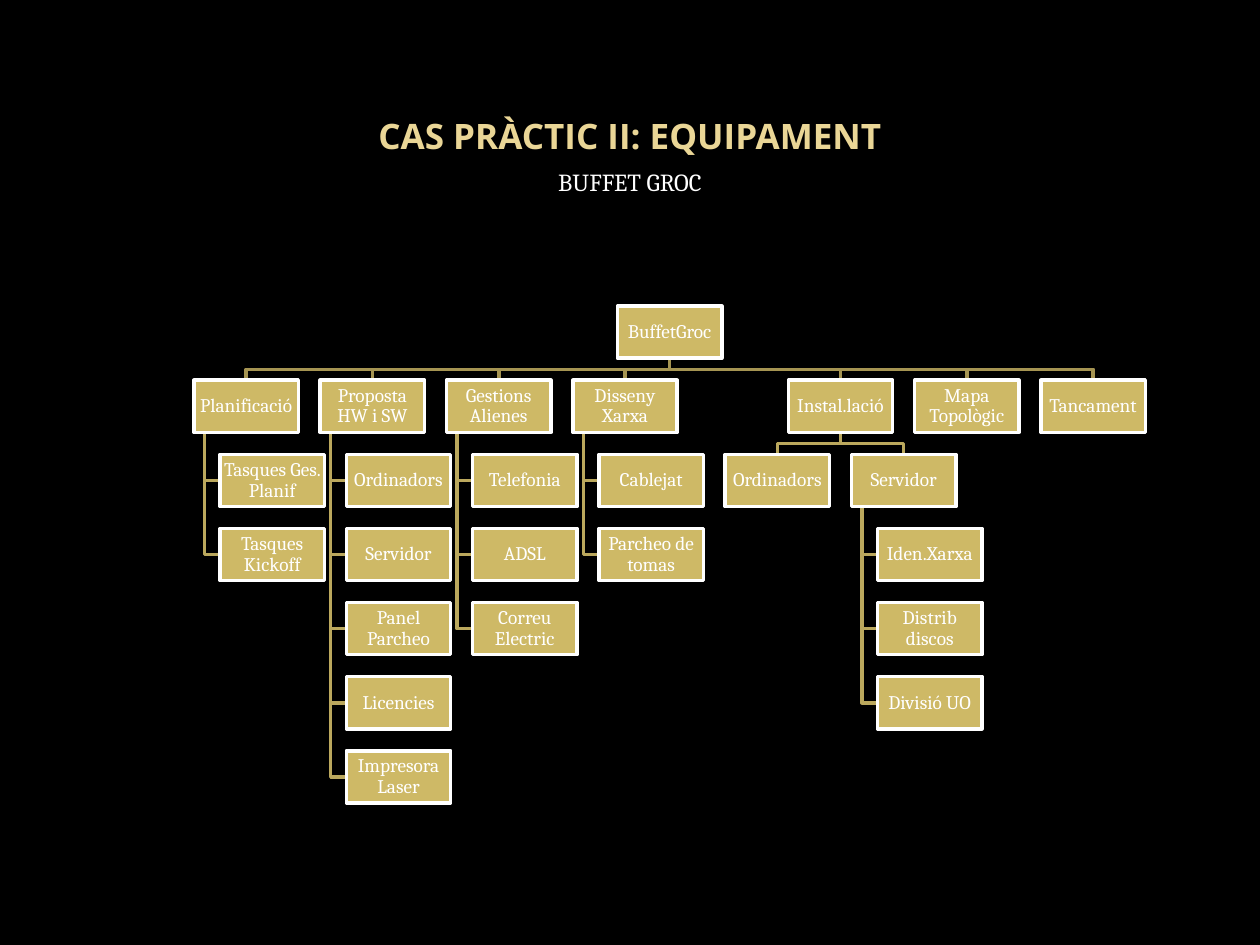
from dataclasses import dataclass

from pptx import Presentation
from pptx import util as u
from pptx.dml import color
from pptx.enum import shapes, text


@dataclass(frozen=True)
class Theme:
    background: str = "000000"
    ink: str = "FFFFFF"
    heading: tuple = ((0.73, "EAD696"), (1.0, "E7D081"))
    heading_angle: int = 280
    box: str = "CEB966"
    links: tuple = ("A59452", "BBA85D")
    stroke: float = 2
    heading_font: str = "Open Sans"
    font: str = "Cambria"
    heading_size: int = 20
    subheading_size: int = 14
    box_size: int = 11


@dataclass
class Task:
    label: str
    children: tuple = ()
    hanging: bool = True
    column: float = 0
    row: float = 0


THEME = Theme()
GAP = 0.21
STEP = 1 + GAP
BOX_HEIGHT = 0.5
ROW_STEP = BOX_HEIGHT + GAP
INDENT = 0.25
STEM = 0.1


def group(label, *names):
    return Task(label, tuple(Task(name) for name in names))


PROJECT = Task("BuffetGroc", (
    group("Planificació", "Tasques Ges. Planif", "Tasques Kickoff"),
    group("Proposta HW i SW", "Ordinadors", "Servidor", "Panel Parcheo",
          "Licencies", "Impresora Laser"),
    group("Gestions Alienes", "Telefonia", "ADSL", "Correu Electric"),
    group("Disseny Xarxa", "Cablejat", "Parcheo de tomas"),
    Task("Instal.lació", (
        Task("Ordinadors"),
        group("Servidor", "Iden.Xarxa", "Distrib discos", "Divisió UO"),
    ), hanging=False),
    Task("Mapa Topològic"),
    Task("Tancament"),
), hanging=False)


def rgb(value):
    return color.RGBColor.from_string(value)


def apply(target, formats):
    for name, value in formats.items():
        setattr(target, name, value)


def write(shape, wording, font, frame):
    apply(shape.text_frame, {"word_wrap": True, "auto_size": text.MSO_AUTO_SIZE.NONE, **frame})
    shape.text_frame.text = wording
    paragraph = shape.text_frame.paragraphs[0]
    paragraph.alignment = text.PP_ALIGN.CENTER
    run = paragraph.runs[0]
    apply(run.font, font)
    run.font.color.rgb = rgb(THEME.ink)
    return paragraph


def margins(size, **changes):
    sides = ("left", "top", "right", "bottom")
    return {f"margin_{side}": u.Inches(changes.get(side, size)) for side in sides}


def place_heading(slide, box):
    left, top, width, height = box
    title, subtitle = slide.shapes.title, slide.placeholders[1]
    title_height, subtitle_height = int(height * 0.48), int(height * 0.49)
    apply(title, dict(left=left, top=top, width=width, height=title_height))
    apply(subtitle, dict(left=left, top=top + height - subtitle_height,
                         width=width, height=subtitle_height))
    heading = write(
        title, "CAS PRÀCTIC II: EQUIPAMENT",
        {"name": THEME.heading_font, "size": u.Pt(THEME.heading_size), "bold": True},
        {"vertical_anchor": text.MSO_ANCHOR.BOTTOM, **margins(0.05, bottom=0)})
    fill = heading.runs[0].font.fill
    fill.gradient()
    fill.gradient_angle = THEME.heading_angle
    for stop, (position, tone) in zip(fill.gradient_stops, THEME.heading):
        stop.position = position
        stop.color.rgb = rgb(tone)
    write(subtitle, "BUFFET GROC",
          {"name": THEME.font, "size": u.Pt(THEME.subheading_size), "bold": False},
          {"vertical_anchor": text.MSO_ANCHOR.TOP, **margins(0.05)})


def descend(task, level=0):
    yield task, level
    for child in task.children:
        yield from descend(child, level + 1)


def arrange(task, row=0):
    task.column, task.row = 0, row
    free = {}
    for index, child in enumerate(task.children, 1):
        arrange(child, row + (index if task.hanging else 1))
        branch = [member for member, _ in descend(child)]
        shift = INDENT if task.hanging else max(
            free.get(member.row, 0) - member.column for member in branch)
        for member in branch:
            member.column += shift
            free[member.row] = member.column + STEP
    if not task.hanging:
        task.column = (task.children[0].column + task.children[-1].column) / 2


def link_points(parent, child):
    bottom = parent.row * ROW_STEP + BOX_HEIGHT
    child_top = child.row * ROW_STEP
    if parent.hanging:
        stem, middle = parent.column + STEM, child_top + BOX_HEIGHT / 2
        return [(stem, bottom), (stem, middle), (child.column, middle)]
    start, end = parent.column + 0.5, child.column + 0.5
    bend = bottom + GAP / 2
    return [(start, bottom), (start, bend), (end, bend), (end, child_top)]


def style(shape, stroke):
    shape.shadow.inherit = False
    shape.line.color.rgb = rgb(stroke)
    shape.line.width = u.Pt(THEME.stroke)


def place_chart(slide, box):
    left, top, width, _ = box
    arrange(PROJECT)
    tasks = list(descend(PROJECT))
    unit = width / (max(task.column for task, _ in tasks) + 1)

    def spot(column, height):
        return round(left + column * unit), round(top + height * unit)

    for parent, level in tasks:
        for child in parent.children:
            start, *bends = [spot(*point) for point in link_points(parent, child)]
            builder = slide.shapes.build_freeform(*start)
            builder.add_line_segments(bends, close=False)
            link = builder.convert_to_shape()
            link.fill.background()
            style(link, THEME.links[min(level, 1)])

    for task, _ in tasks:
        card = slide.shapes.add_shape(
            shapes.MSO_SHAPE.RECTANGLE, *spot(task.column, task.row * ROW_STEP),
            round(unit), round(unit * BOX_HEIGHT))
        card.fill.solid()
        card.fill.fore_color.rgb = rgb(THEME.box)
        style(card, THEME.ink)
        label = write(card, task.label,
                      {"name": THEME.font, "size": u.Pt(THEME.box_size)},
                      {"vertical_anchor": text.MSO_ANCHOR.MIDDLE, **margins(0.01)})
        label.line_spacing = 0.9


def main():
    deck = Presentation()
    apply(deck, {"slide_width": u.Inches(10), "slide_height": u.Inches(7.5)})
    slide = deck.slides.add_slide(deck.slide_layouts[2])
    slide.background.fill.solid()
    slide.background.fill.fore_color.rgb = rgb(THEME.background)

    def region(left, top, width, height):
        return (int(deck.slide_width * left), int(deck.slide_height * top),
                int(deck.slide_width * width), int(deck.slide_height * height))

    place_heading(slide, region(0.2, 0.089, 0.6, 0.159))
    place_chart(slide, region(0.154, 0.324, 0.755, 0.525))
    deck.save("out.pptx")


if __name__ == "__main__":
    main()
